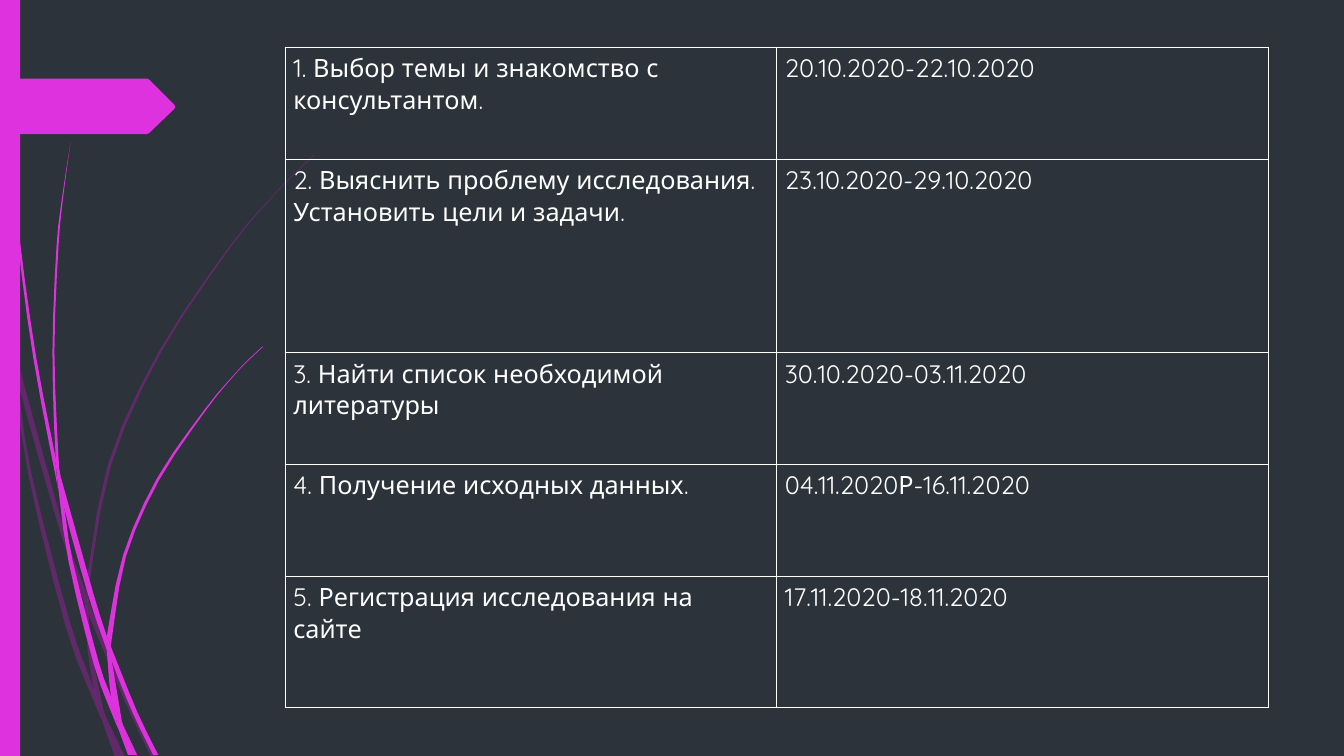
from dataclasses import dataclass

from lxml.etree import SubElement
from pptx import Presentation
from pptx.dml.color import RGBColor as Rgb
from pptx.enum.shapes import MSO_SHAPE as Shape
from pptx.oxml import parse_xml
from pptx.oxml.ns import nsdecls, qn
from pptx.util import Pt

PX = 9144  # 100 px to the inch
WIDE, HIGH = 1333, 750


@dataclass(frozen=True)
class Theme:
    back: str = "2C333A"
    pink: str = "DE32DE"
    plum: str = "B01CB0"
    ink: str = "FFFFFF"
    font: str = "Quicksand"
    size: int = 18
    rule: int = 1
    fade: int = 40


THEME = Theme()

# Each piece of grass: one edge going out, then the other coming back
FAINT = [
    ([(11, 350), (9, 322), (0, 282)], [(0, 299), (10, 344), (11, 350)]),
    ([(14, 345), (17, 376), (58, 522), (84, 599)], [(85, 586), (62, 520), (14, 345)]),
    ([(88, 610), (123, 694), (150, 751)],
     [(155, 751), (127, 692), (92, 607), (88, 596)]),
    ([(105, 711), (119, 751)], [(124, 751), (105, 711)]),
    ([(11, 350), (28, 470), (65, 621), (92, 693), (101, 714)],
     [(99, 707), (93, 683), (70, 619), (31, 469), (17, 376), (11, 350)]),
    ([(84, 599), (87, 646), (93, 683), (96, 692), (105, 711)],
     [(103, 706), (91, 646), (88, 610), (84, 599)]),
    ([(312, 153), (289, 175), (268, 197), (228, 244), (158, 348), (107, 461),
      (85, 584)],
     [(88, 596), (88, 584), (110, 462), (160, 349), (229, 245), (268, 198),
      (290, 175), (312, 154)]),
    ([(101, 714), (114, 751)], [(119, 751), (101, 714)]),
    ([(84, 599), (88, 610)], [(88, 596), (85, 586)]),
    ([(93, 683), (99, 707), (101, 714), (119, 751)],
     [(119, 751), (105, 711), (96, 692)]),
]
BRIGHT = [
    ([(3, 0), (4, 48), (7, 110), (17, 233), (33, 355), (56, 477), (57, 481)],
     [(55, 457), (55, 453), (36, 355), (19, 232), (8, 109), (5, 48), (4, 0)]),
    ([(60, 472), (64, 505), (88, 592), (106, 645)],
     [(106, 631), (93, 590), (60, 472)]),
    ([(110, 641), (111, 656), (132, 708), (152, 749)],
     [(157, 749), (136, 706), (113, 649), (110, 641)]),
    ([(57, 477), (68, 557), (93, 659), (111, 708), (117, 722)],
     [(116, 717), (110, 691), (98, 657), (72, 556), (64, 505), (57, 477)]),
    ([(70, 141), (62, 193), (56, 245), (52, 349), (55, 449), (60, 472)],
     [(60, 472), (58, 453), (54, 349), (58, 245), (63, 193), (70, 141)]),
    ([(122, 719), (133, 749)], [(136, 749), (122, 719)]),
    ([(55, 449), (57, 477), (64, 505)], [(60, 472), (55, 449)]),
    ([(260, 344), (245, 358), (231, 373), (204, 405), (156, 474), (122, 551),
      (106, 631)],
     [(110, 641), (111, 633), (125, 552), (158, 476), (205, 406), (231, 374),
      (245, 359), (261, 344)]),
    ([(117, 722), (127, 749)], [(131, 749), (117, 722)]),
    ([(106, 645), (110, 691), (116, 706), (122, 719)],
     [(121, 716), (111, 656), (109, 651), (106, 645)]),
    ([(106, 631), (106, 645), (111, 656)], [(110, 641), (106, 631)]),
    ([(110, 691), (116, 717), (117, 722), (130, 749)],
     [(133, 749), (122, 719), (116, 706), (110, 691)]),
]

ROWS = [
    (111, "1. Выбор темы и знакомство с консультантом.", "20.10.2020-22.10.2020"),
    (192, "2. Выяснить проблему исследования. Установить цели и задачи.",
     "23.10.2020-29.10.2020"),
    (111, "3. Найти список необходимой литературы", "30.10.2020-03.11.2020"),
    (111, "4. Получение исходных данных.", "04.11.2020Р-16.11.2020"),
    (130, "5. Регистрация исследования на сайте", "17.11.2020-18.11.2020"),
]


def paint(shape, color, alpha=100):
    shape.shadow.inherit = False
    shape.fill.solid()
    shape.fill.fore_color.rgb = Rgb.from_string(color)
    shape.line.fill.background()
    if alpha < 100:
        tint = shape.element.spPr.find(".//" + qn("a:srgbClr"))
        SubElement(tint, qn("a:alpha")).set("val", str(alpha * 1000))


def smooth(knots, steps=3):
    """Return points on a Catmull-Rom curve through the knots."""
    if len(knots) == 2:
        return knots
    ends = [knots[0], *knots, knots[-1]]
    curve = []
    for a, b, c, d in zip(ends, ends[1:], ends[2:], ends[3:]):
        for step in range(steps):
            t = step / steps
            curve.append(tuple(
                q + t * (r - p) / 2 + t * t * (2 * p - 5 * q + 4 * r - s) / 2
                + t ** 3 * (3 * q - p - 3 * r + s) / 2
                for p, q, r, s in zip(a, b, c, d)))
    return curve + [knots[-1]]


def trace(slide, left, top, points):
    """Build a closed outline from px points relative to left and top."""
    spots = [((left + x) * PX, (top + y) * PX) for x, y in points]
    form = slide.shapes.build_freeform(*spots[0], scale=1.0)
    form.add_line_segments(spots[1:], close=True)
    return form.convert_to_shape()


def draw_grass(slide, left, top):
    for blades, color, alpha in ((FAINT, THEME.plum, THEME.fade),
                                 (BRIGHT, THEME.pink, 100)):
        for out, back in blades:
            edge = smooth(out) + smooth(back)
            paint(trace(slide, left, top, edge), color, alpha)


def draw_bar(slide, left, top, width, height):
    box = (n * PX for n in (left, top, width, height))
    paint(slide.shapes.add_shape(Shape.RECTANGLE, *box), THEME.pink)


def draw_tag(slide, left, top, width, height):
    """Draw an arrow tag with a blunted tip."""
    neck, mid = width - 26, height // 2
    points = [(0, 0), (neck - 2, 0), (neck, 1), (width - 1, mid - 1), (width, mid + 1),
              (width - 1, mid + 3), (neck, height - 1), (neck - 2, height), (0, height)]
    paint(trace(slide, left, top, points), THEME.pink)


def rule_cell(cell):
    props = cell._tc.get_or_add_tcPr()
    for spot, side in enumerate("LRTB"):
        props.insert(spot, parse_xml(
            f'<a:ln{side} {nsdecls("a")} w="{Pt(THEME.rule)}"><a:solidFill>'
            f'<a:srgbClr val="{THEME.ink}"/></a:solidFill></a:ln{side}>'))


def fill_cell(cell, text):
    cell.margin_left, cell.margin_right = 8 * PX, 9 * PX
    cell.margin_top = cell.margin_bottom = 5 * PX
    cell.fill.background()
    rule_cell(cell)
    cell.text_frame.text = text
    font = cell.text_frame.paragraphs[0].runs[0].font
    font.name, font.size = THEME.font, Pt(THEME.size)
    font.color.rgb = Rgb.from_string(THEME.ink)


def draw_plan(slide, left, top, width):
    """Add the table of stages and dates."""
    height = sum(row[0] for row in ROWS)
    box = (n * PX for n in (left, top, width, height))
    table = slide.shapes.add_table(len(ROWS), 2, *box).table
    table.first_row = table.horz_banding = False
    for line, (tall, *texts) in zip(table.rows, ROWS):
        line.height = tall * PX
        for cell, text in zip(line.cells, texts):
            fill_cell(cell, text)


def main():
    deck = Presentation()
    deck.slide_width, deck.slide_height = WIDE * PX, HIGH * PX
    slide = deck.slides.add_slide(deck.slide_layouts[6])
    slide.background.fill.solid()
    slide.background.fill.fore_color.rgb = Rgb.from_string(THEME.back)
    draw_grass(slide, 0, 0)
    draw_bar(slide, 0, 0, 20, HIGH)
    draw_tag(slide, 0, 78, 174, 55)
    draw_plan(slide, 283, 47, 975)
    deck.save("out.pptx")


if __name__ == "__main__":
    main()
